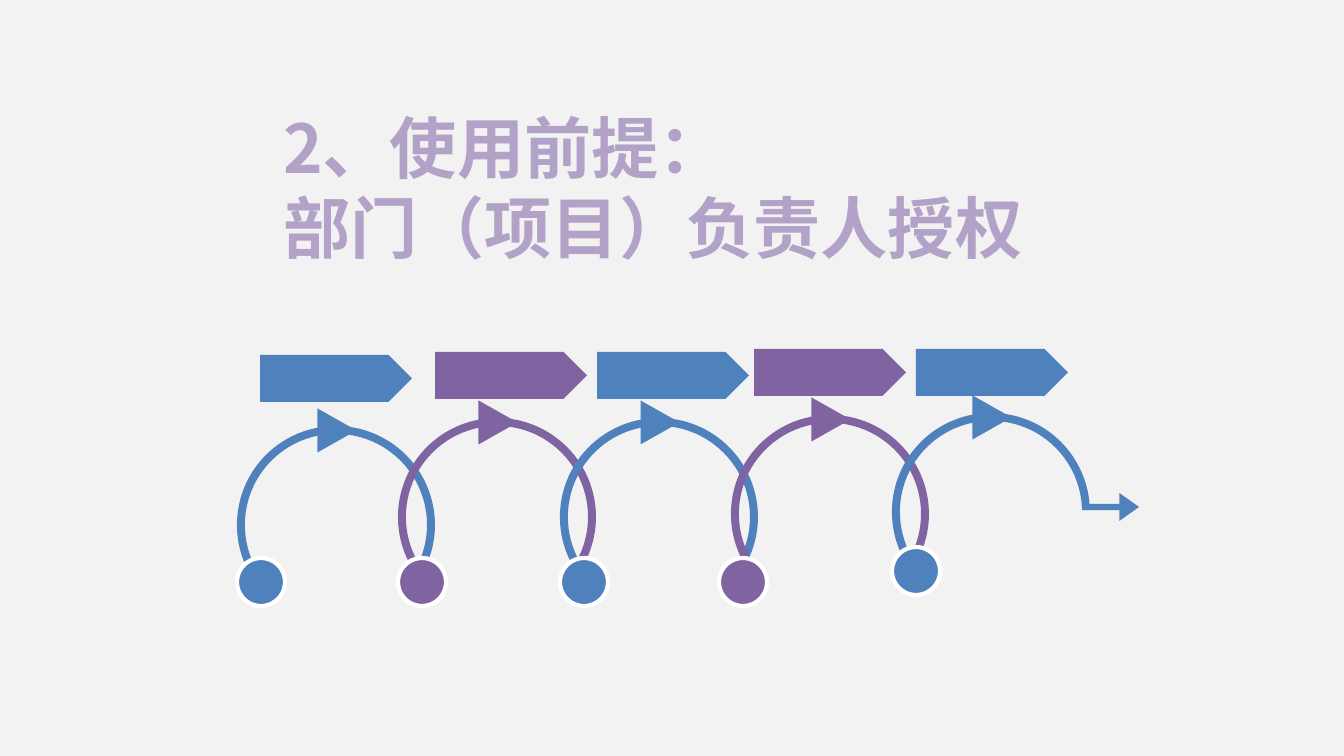
from dataclasses import dataclass

from lxml.etree import SubElement
from pptx import Presentation
from pptx.dml.color import RGBColor as Rgb
from pptx.enum.shapes import MSO_SHAPE as Preset
from pptx.enum.text import MSO_ANCHOR as Anchor
from pptx.oxml.ns import qn
from pptx.util import Pt

EMU_PER_PX = 914400 / 134.4


@dataclass(frozen=True)
class Theme:
    background: Rgb = Rgb.from_string("F2F2F2")
    blue: Rgb = Rgb.from_string("4F81BD")
    purple: Rgb = Rgb.from_string("8064A2")
    heading: Rgb = Rgb.from_string("B3A2C7")
    outline: Rgb = Rgb.from_string("FFFFFF")
    font: str = "Noto Sans CJK SC"
    heading_size: Pt = Pt(36)
    heading_pitch: Pt = Pt(43.2)
    outline_width: Pt = Pt(2.25)


THEME = Theme()


def px(length):
    return round(length * EMU_PER_PX)


def apply(target, formats):
    for name, value in formats.items():
        setattr(target, name, value)


def add_part(shapes, preset, box, color, adjustments=()):
    part = shapes.add_shape(preset, *map(px, box))
    part.shadow.inherit = False
    part.fill.solid()
    part.fill.fore_color.rgb = color
    part.line.fill.background()
    for index, value in enumerate(adjustments):
        part.adjustments[index] = value
    return part


def add_heading(slide, box, lines):
    heading = slide.shapes.add_textbox(*map(px, box))
    frame = heading.text_frame
    apply(frame, {
        "word_wrap": True,
        "vertical_anchor": Anchor.TOP,
        "margin_left": px(13),
        "margin_right": px(13),
        "margin_top": px(13),
        "margin_bottom": 0,
    })
    frame.text = "\n".join(lines)
    for paragraph in frame.paragraphs:
        paragraph.line_spacing = THEME.heading_pitch
        for run in paragraph.runs:
            apply(run.font, {"name": THEME.font, "size": THEME.heading_size, "bold": True})
            run.font.color.rgb = THEME.heading
            east_asian = SubElement(run.font._element, qn("a:ea"))
            east_asian.set("typeface", THEME.font)


def add_loop(slide, box, color, is_last):
    left, top, width, height = box
    loop = slide.shapes.add_group_shape().shapes
    start = 109.61 if is_last else 90.6
    arc = add_part(loop, Preset.BLOCK_ARC, box, color, (start, 17.63, 0.04))
    arc._element.spPr.find(qn("a:xfrm")).set("flipH", "1")
    pointer = add_part(loop, Preset.ISOSCELES_TRIANGLE, (left + 78, top - 15, 44, 39), color)
    pointer.rotation = 90
    if is_last:
        exit_box = (left + width - 8, top + 80, 57, 28)
        add_part(loop, Preset.RIGHT_ARROW, exit_box, color, (0.22, 0.7))


def add_bead(slide, box, color):
    bead = add_part(slide.shapes, Preset.OVAL, box, color)
    bead.line.color.rgb = THEME.outline
    bead.line.width = THEME.outline_width


def add_chain(slide, box):
    left, top, _, _ = box
    loops = [(0, 77), (161, 69), (323, 69), (494, 66), (655, 64)]
    beads = [(0, 209), (161, 209), (323, 209), (482, 209), (655, 198)]
    banners = [(23, 6), (198, 3), (360, 3), (517, 0), (679, 0)]
    colors = [(THEME.blue, THEME.purple)[i % 2] for i in range(len(loops))]

    for i, ((x, y), color) in enumerate(zip(loops, colors)):
        add_loop(slide, (left + x, top + y, 198, 198), color, i == len(loops) - 1)
    for (x, y), color in zip(beads, colors):
        add_bead(slide, (left + x, top + y, 48, 48), color)
    for (x, y), color in zip(banners, colors):
        add_part(slide.shapes, Preset.PENTAGON, (left + x, top + y, 152, 47), color)


def main():
    deck = Presentation()
    apply(deck, {"slide_width": px(1344), "slide_height": px(756)})
    slide = deck.slides.add_slide(deck.slide_layouts[6])
    slide.background.fill.solid()
    slide.background.fill.fore_color.rgb = THEME.background
    add_chain(slide, (237, 349, 902, 257))
    add_heading(slide, (270, 93, 836, 176), ["2、使用前提：", "部门（项目）负责人授权"])
    deck.save("out.pptx")


if __name__ == "__main__":
    main()
